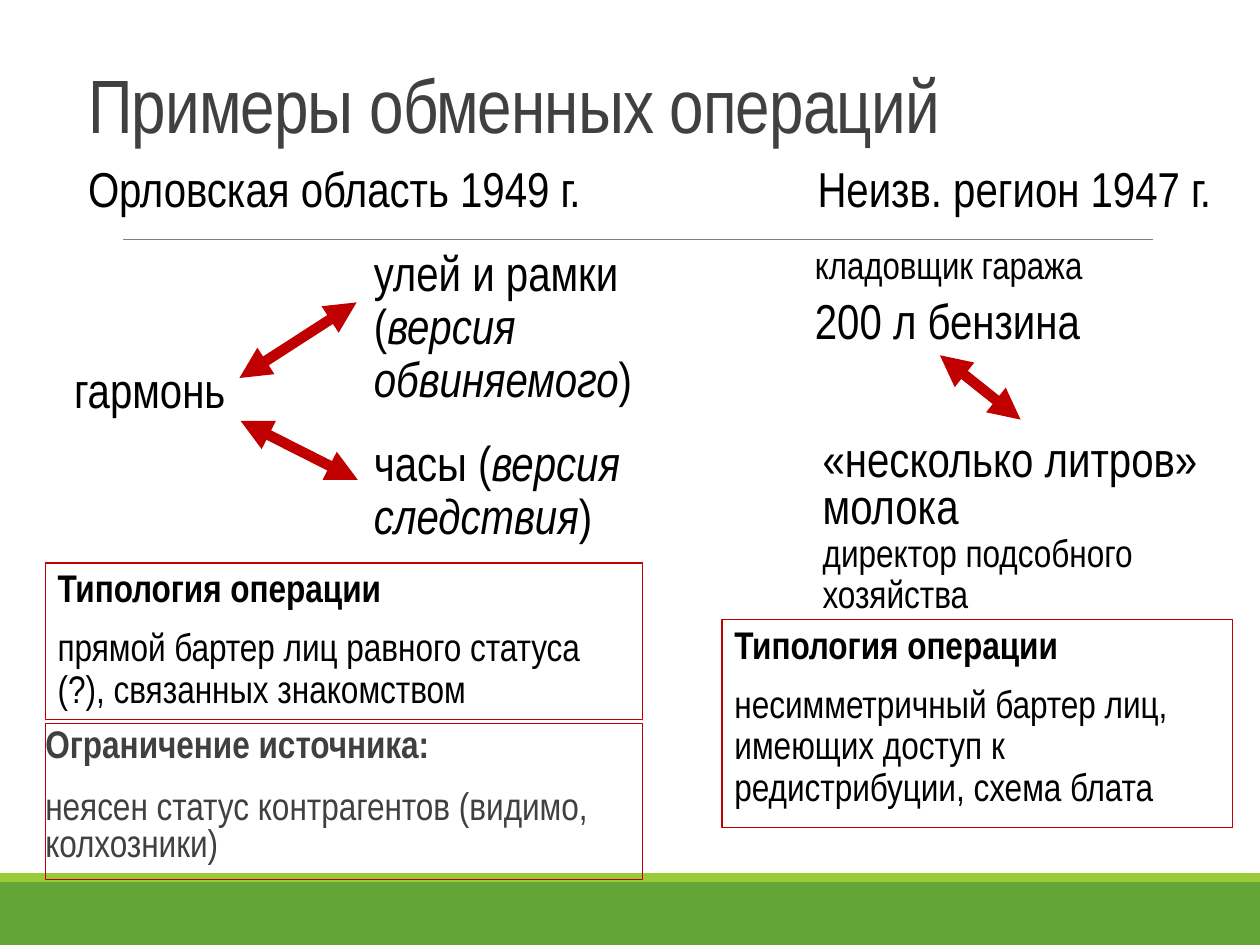
from lxml import etree
from pptx import Presentation
from pptx.dml.color import RGBColor
from pptx.enum import shapes, text
from pptx.oxml import ns
from pptx.util import Pt

THEME = {
    "font": "Arial Narrow",
    "ink": "000000", "muted": "404040", "accent": "C00000",
    "rule": "808080", "band": "63A537", "stripe": "99CB38",
    "title": 43.2, "large": 28, "small": 22, "caption": 21.7,
}

TITLE = "Примеры обменных операций"
BANDS = [((0, 504, 720, 36), "band"), ((0, 499, 720, 5), "stripe")]
RULE = (70.5, 136.8, 659, 136.8)

LABELS = [
    ((43.2, 90.7, 323.3, 43.9), "large", 0.9, [("Орловская область 1949 г.", False)]),
    ((460.1, 90.7, 254.2, 43.9), "large", 0.9, [("Неизв. регион 1947 г.", False)]),
    ((35.3, 205.9, 128.9, 43.9), "large", 0.9, [("гармонь", False)]),
    ((206.6, 139, 205.2, 98.6), "large", 0.9,
     [("улей и рамки (", False), ("версия обвиняемого", True), (")", False)]),
    ((206.6, 247.7, 188.6, 76.3), "large", 0.9,
     [("часы (", False), ("версия следствия", True), (")", False)]),
    ((458.6, 141.8, 172.1, 27.4), "caption", 0.7, [("кладовщик гаража", False)]),
    ((458.6, 166.3, 212.4, 43.9), "large", 0.9, [("200 л бензина", False)]),
    ((463, 247.7, 248.4, 64.8), "large", 0.8, [("«несколько литров» молока", False)]),
    ((463, 301.7, 216.7, 51.1), "small", 0.9, [("директор подсобного хозяйства", False)]),
]

LIMITS = ((25.9, 413.3, 341.3, 89.3), "Ограничение источника:",
          "неясен статус контрагентов (видимо, колхозники)")
TYPOLOGIES = [
    ((25.9, 321.8, 341.3, 89.3), "Типология операции",
     "прямой бартер лиц равного статуса (?), связанных знакомством"),
    ((412.6, 354.2, 291.6, 118.8), "Типология операции",
     "несимметричный бартер лиц, имеющих доступ к редистрибуции, схема блата"),
]

EXCHANGES = [
    (136.8, 216, 203.8, 172.8),
    (137.5, 240.5, 204.5, 274.3),
    (537.1, 203, 583.2, 239.8),
]


def color(name):
    return RGBColor.from_string(THEME[name])


def points(values):
    return [Pt(value) for value in values]


def add_span(para, words, size, ink="ink", bold=False, italic=False):
    span = para.add_run()
    span.text = words
    span.font.name = THEME["font"]
    span.font.size = Pt(THEME[size])
    span.font.color.rgb = color(ink)
    span.font.bold = bold
    span.font.italic = italic
    return span


def space(para, line, before=10, after=0):
    para.alignment = text.PP_ALIGN.LEFT
    para.line_spacing = line
    para.space_before = Pt(before)
    para.space_after = Pt(after)


def add_textbox(page, place):
    box = page.shapes.add_textbox(*points(place))
    box.text_frame.word_wrap = True
    return box


def add_rectangle(page, place):
    box = page.shapes.add_shape(shapes.MSO_SHAPE.RECTANGLE, *points(place))
    box.shadow.inherit = False
    return box


def add_band(page, place, fill):
    band = add_rectangle(page, place)
    band.fill.solid()
    band.fill.fore_color.rgb = color(fill)
    band.line.fill.background()


def add_title(page):
    frame = add_textbox(page, (43.2, 14.4, 553.7, 74.2)).text_frame
    frame.vertical_anchor = text.MSO_ANCHOR.BOTTOM
    para = frame.paragraphs[0]
    space(para, 0.85, 0)
    span = add_span(para, TITLE, "title", "muted")
    span.font._element.set("spc", "-50")


def add_label(page, place, size, line, spans):
    para = add_textbox(page, place).text_frame.paragraphs[0]
    space(para, line)
    for words, italic in spans:
        add_span(para, words, size, italic=italic)


def add_panel(page, place, heading, body, ink="ink", line=0.9, before=10, after=0, inset=7.2):
    panel = add_rectangle(page, place)
    panel.fill.background()
    panel.line.color.rgb = color("accent")
    panel.line.width = Pt(0.75)
    frame = panel.text_frame
    frame.word_wrap = True
    frame.vertical_anchor = text.MSO_ANCHOR.TOP
    frame.margin_left = frame.margin_right = Pt(inset)
    frame.text = "\n".join((" ", " "))
    for para, words, bold in zip(frame.paragraphs, (heading, body), (True, False)):
        para.clear()
        space(para, line, before, after)
        add_span(para, words, "small", ink, bold)


def add_line(page, ends, ink, width, arrows=False):
    line = page.shapes.add_connector(shapes.MSO_CONNECTOR.STRAIGHT, *points(ends))
    line.line.color.rgb = color(ink)
    line.line.width = Pt(width)
    if arrows:
        outline = line.line._get_or_add_ln()
        for end in ("a:headEnd", "a:tailEnd"):
            etree.SubElement(outline, ns.qn(end), type="triangle")
    etree.SubElement(line._element.spPr, ns.qn("a:effectLst"))


def main():
    deck = Presentation()
    deck.slide_width, deck.slide_height = Pt(720), Pt(540)
    page = deck.slides.add_slide(deck.slide_layouts[6])
    for place, fill in BANDS:
        add_band(page, place, fill)
    add_line(page, RULE, "rule", 0.5)
    add_title(page)
    add_panel(page, *LIMITS, ink="muted", line=0.8, before=12, after=2, inset=0)
    for label in LABELS:
        add_label(page, *label)
    for ends in EXCHANGES:
        add_line(page, ends, "accent", 6, arrows=True)
    for typology in TYPOLOGIES:
        add_panel(page, *typology)
    deck.save("out.pptx")


if __name__ == "__main__":
    main()
